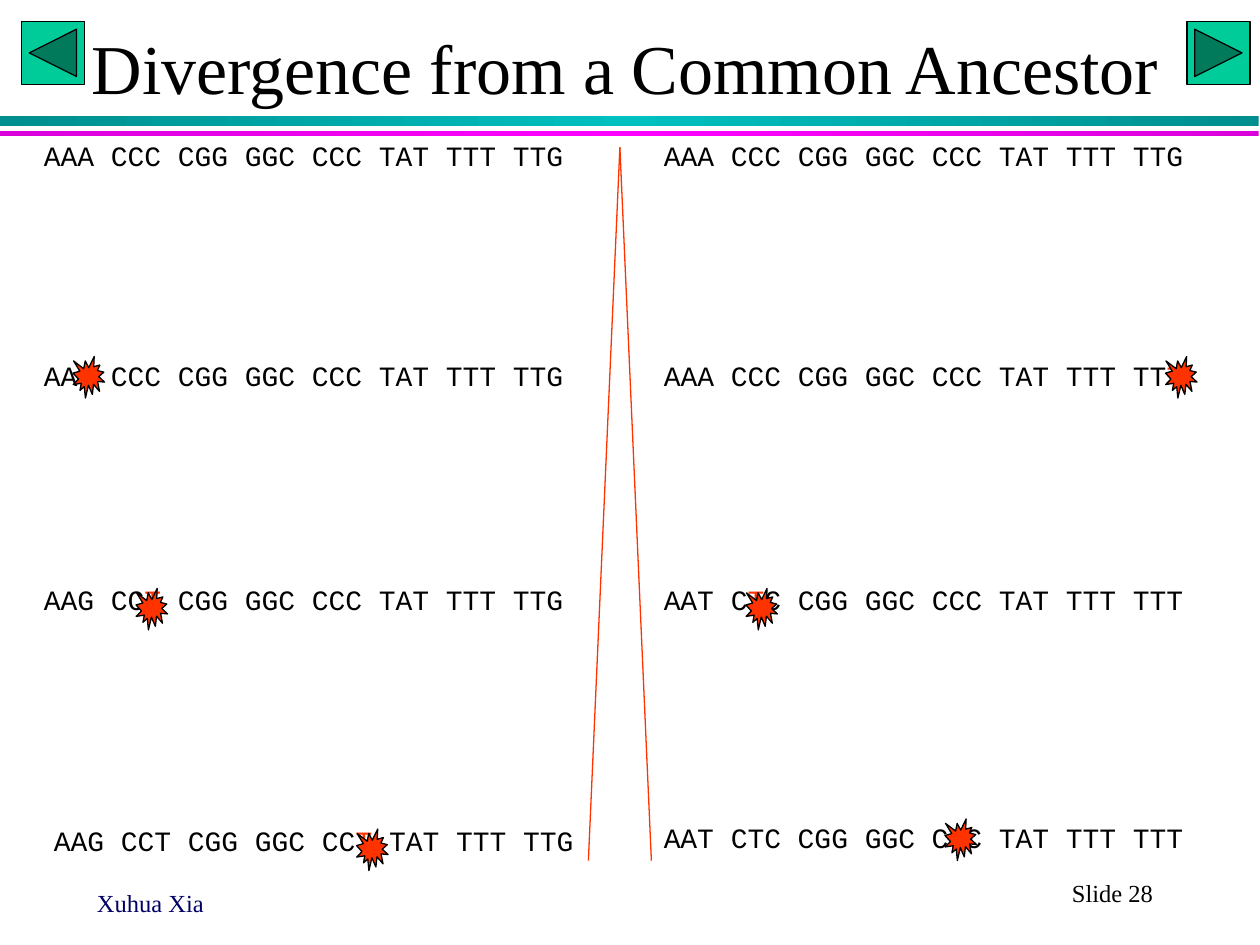
from dataclasses import dataclass

from lxml import etree
from pptx import Presentation
from pptx.dml.color import RGBColor
from pptx.enum.shapes import MSO_CONNECTOR as Connector, MSO_SHAPE as Shape
from pptx.enum.text import MSO_ANCHOR as Anchor, PP_ALIGN as Align
from pptx.oxml import parse_xml
from pptx.oxml.ns import nsdecls, qn
from pptx.util import Inches, Pt


@dataclass(frozen=True)
class Theme:
    serif: str = "Times New Roman"
    mono: str = "Courier New"
    title_size: int = 40
    sequence_size: int = 16
    footer_size: int = 14
    ink: str = "000000"
    navy: str = "000066"
    red: str = "FF3300"
    green: str = "00CC99"
    teal_bar: tuple = ("008E8E", "00C0C0")
    purple_bar: tuple = ("DA00DA", "FF00FF")


theme = Theme()
deck = Presentation()
deck.slide_width, deck.slide_height = Inches(10), Inches(7.5)
page = deck.slides.add_slide(deck.slide_layouts[5])


def write(text, *, at, box=None, size=theme.sequence_size, font=theme.mono,
          color=theme.ink, align=Align.LEFT, anchor=Anchor.TOP,
          top=0.05, bottom=0.05):
    """Write text at (left, top, width, height); a part in [brackets] is red."""
    left, y, width, height = map(Inches, at)
    if box is None:
        box = page.shapes.add_textbox(left, y, width, height)
    box.left, box.top, box.width, box.height = left, y, width, height
    frame = box.text_frame
    frame.word_wrap = True
    frame.vertical_anchor = anchor
    frame.margin_left = frame.margin_right = Inches(0.1)
    frame.margin_top, frame.margin_bottom = Inches(top), Inches(bottom)
    para = frame.paragraphs[0]
    para.alignment = align
    for index, part in enumerate(text.replace("]", "[").split("[")):
        if part:
            span = para.add_run()
            span.text = part
            span.font.name = font
            span.font.size = Pt(size)
            span.font.color.rgb = RGBColor.from_string(
                theme.red if index % 2 else color)


def draw(kind, at, fill, outlined=True):
    """Draw a flat preset shape, with a thin dark outline if asked."""
    shape = page.shapes.add_shape(kind, *map(Inches, at))
    shape.shadow.inherit = False
    shape.fill.solid()
    shape.fill.fore_color.rgb = RGBColor.from_string(fill)
    if outlined:
        shape.line.color.rgb = RGBColor.from_string(theme.ink)
        shape.line.width = Pt(0.75)
    else:
        shape.line.fill.background()
    return shape


# Title
write("Divergence from a Common Ancestor", box=page.shapes.title,
      at=(0.5, 0.17, 8.92, 0.71), size=theme.title_size, font=theme.serif,
      align=Align.CENTER, anchor=Anchor.MIDDLE)

# Gradient bars under the title, brightest in the middle
for y, height, (edge, middle) in ((0.92, 0.08, theme.teal_bar),
                                  (1.04, 0.04, theme.purple_bar)):
    bar = draw(Shape.RECTANGLE, (0, y, 9.99, height), edge, outlined=False)
    stops = "".join(
        f'<a:gs pos="{pos}"><a:srgbClr val="{color}"/></a:gs>'
        for pos, color in ((0, edge), (50000, middle), (100000, edge)))
    solid = bar.fill._xPr.find(qn("a:solidFill"))
    solid.getparent().replace(solid, parse_xml(
        f'<a:gradFill {nsdecls("a")}><a:gsLst>{stops}</a:gsLst>'
        '<a:lin ang="0" scaled="0"/></a:gradFill>'))

# Navigation buttons
draw(Shape.ACTION_BUTTON_BACK_OR_PREVIOUS, (0.17, 0.17, 0.5, 0.5), theme.green)
draw(Shape.ACTION_BUTTON_FORWARD_OR_NEXT, (9.42, 0.17, 0.5, 0.5), theme.green)

# Footer
write("Xuhua Xia", at=(0.67, 7, 2.08, 0.25), size=theme.footer_size,
      font=theme.serif, color=theme.navy)
write("Slide 28", at=(7.83, 6.92, 2, 0.33), size=theme.footer_size,
      font=theme.serif, align=Align.CENTER)

# The common ancestor heads both lineages
for left, width in ((0.25, 5.58), (5.17, 4.58)):
    write("AAA CCC CGG GGC CCC TAT TTT TTG", at=(left, 1, width, 0.37), top=0.1)

# Descendants: left, top, width, sequence with its new mutation in brackets
descendants = (
    (0.25, 1.25, 5.58, "AA[G] CCC CGG GGC CCC TAT TTT TTG"),
    (0.25, 3.03, 5.58, "AAG CC[T] CGG GGC CCC TAT TTT TTG"),
    (0.33, 4.94, 5.58, "AAG CCT CGG GGC CC[T] TAT TTT TTG"),
    (5.17, 1.25, 4.42, "AAA CCC CGG GGC CCC TAT TTT TT[T]"),
    (5.17, 3.03, 5, "AAT C[T]C CGG GGC CCC TAT TTT TTT"),
    (5.17, 4.92, 5, "AAT CTC CGG GGC C[T]C TAT TTT TTT"),
)
for left, y, width, sequence in descendants:
    write(sequence, at=(left, y, width, 1.97), anchor=Anchor.BOTTOM, bottom=0.11)

# Bursts marking the mutations
for left, y in ((0.58, 2.83), (1.08, 4.67), (2.83, 6.58),
                (9.25, 2.83), (5.92, 4.67), (7.5, 6.5)):
    draw(Shape.EXPLOSION1, (left, y, 0.25, 0.33), theme.red)

# Diverging branches
for foot in (4.67, 5.17):
    branch = page.shapes.add_connector(
        Connector.STRAIGHT, Inches(foot), Inches(6.83), Inches(4.92), Inches(1.17))
    branch.line.color.rgb = RGBColor.from_string(theme.red)
    branch.line.width = Pt(0.75)
    etree.SubElement(branch._element.spPr, qn("a:effectLst"))

deck.save("out.pptx")
